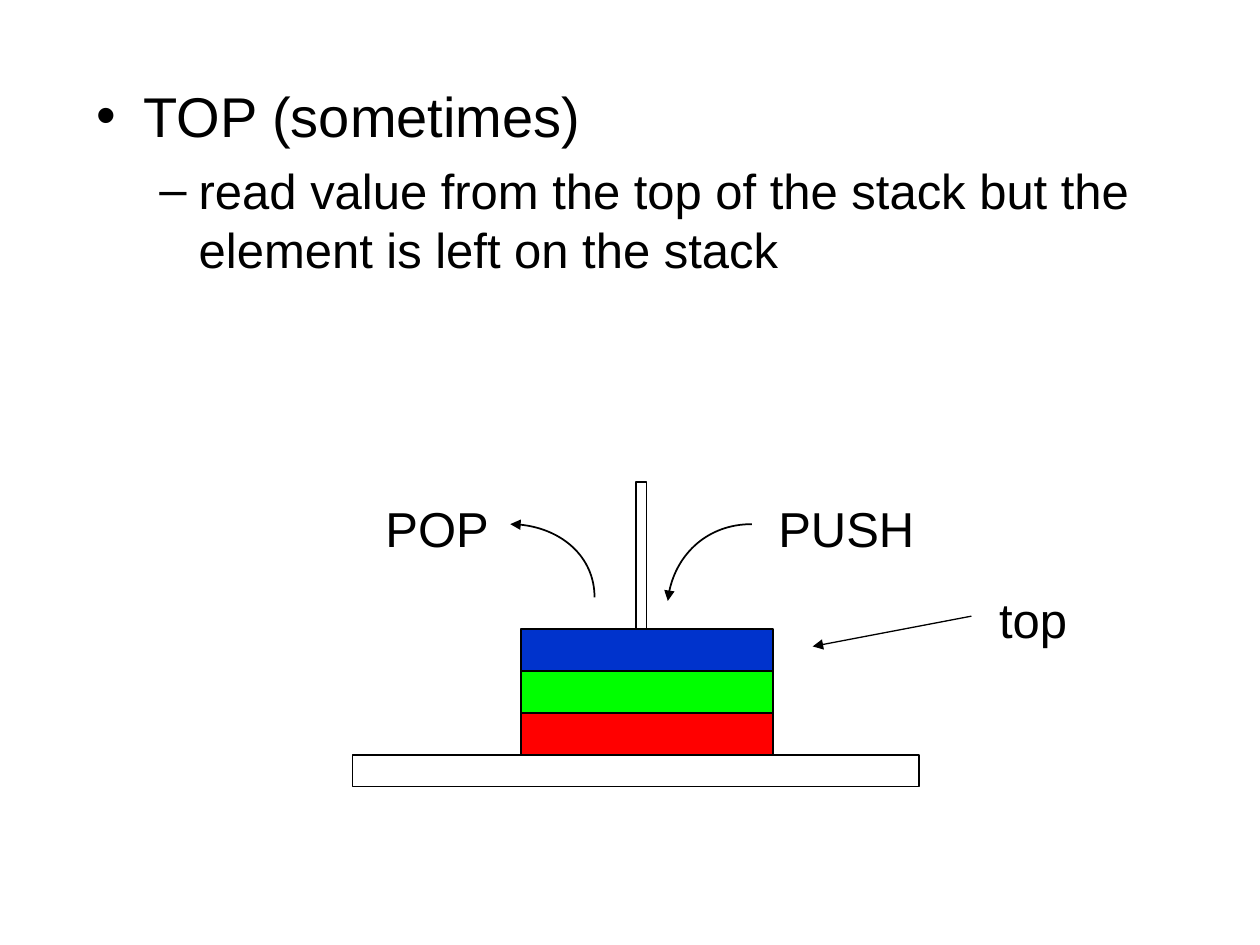
from lxml.etree import SubElement as Sub
from pptx import Presentation as Deck
from pptx.dml.color import RGBColor as Rgb
from pptx.enum.shapes import MSO_CONNECTOR as Link, MSO_SHAPE as Form
from pptx.enum.text import PP_ALIGN as Align
from pptx.oxml.ns import qn
from pptx.util import Pt

BLACK, WHITE = "000000", "FFFFFF"
DISKS = ["FF0000", "00FF00", "0033CC"]


def paint(fill, color):
    fill.solid()
    fill.fore_color.rgb = Rgb.from_string(color)


def put(obj, vals):
    for key, val in vals.items():
        setattr(obj, key, val)


def edge(shape, width):
    paint(shape.line.fill, BLACK)
    shape.line.width = Pt(width)


def tip(shape, end):
    line = shape.element.find(".//" + qn("a:ln"))
    Sub(line, qn("a:" + end), type="triangle")


def bar(slide, box, color):
    shape = slide.shapes.add_shape(Form.RECTANGLE, *map(Pt, box))
    shape.shadow.inherit = False
    paint(shape.fill, color)
    edge(shape, 1)


def curve(slide, dots, end):
    start, *rest = [tuple(map(Pt, dot)) for dot in dots]
    pen = slide.shapes.build_freeform(*start)
    pen.add_line_segments(rest, close=False)
    shape = pen.convert_to_shape()
    shape.shadow.inherit = False
    shape.fill.background()
    edge(shape, 1)
    path = shape.element.find(".//" + qn("a:path"))
    lines = path.findall(qn("a:lnTo"))
    bend = Sub(path, qn("a:cubicBezTo"))
    for line in lines:
        bend.append(line[0])
        path.remove(line)
    tip(shape, end)


def arrow(slide, start, stop):
    shape = slide.shapes.add_connector(Link.STRAIGHT, *map(Pt, start + stop))
    edge(shape, 0.75)
    tip(shape, "tailEnd")
    Sub(shape.element.spPr, qn("a:effectLst"))


def frame(slide, box, wrap=True):
    text = slide.shapes.add_textbox(*map(Pt, box)).text_frame
    text.word_wrap = wrap
    return text


def write(para, words, size, **vals):
    put(para, vals)
    run = para.add_run()
    run.text = words
    put(run.font, {"name": "Arial", "size": Pt(size)})
    paint(run.font.fill, BLACK)


def bullet(para, mark, left, hang):
    props = para._p.get_or_add_pPr()
    props.set("marL", str(Pt(left)))
    props.set("indent", str(Pt(-hang)))
    Sub(props, qn("a:buFont"), typeface="Arial")
    Sub(props, qn("a:buChar"), char=mark)


def label(slide, words, box, align=Align.CENTER, wrap=True):
    text = frame(slide, box, wrap)
    write(text.paragraphs[0], words, 28, alignment=align)


def body(slide):
    text = frame(slide, (48, 43.2, 612, 164))
    head = text.paragraphs[0]
    write(head, "TOP (sometimes)", 32)
    bullet(head, "•", 27, 27)
    item = text.add_paragraph()
    write(item, "read value from the top of the stack but the element is left on the stack",
          28, level=1, space_before=Pt(6.5))
    bullet(item, "–", 58.5, 22.5)


def stack(slide):
    base, high = 431.4, 24
    bar(slide, (201.4, base, 324, 18), WHITE)
    bar(slide, (363.5, 275.4, 6, 156), WHITE)
    for num, color in enumerate(DISKS, 1):
        bar(slide, (297.6, base - num * high, 144, high), color)


def main():
    deck = Deck()
    put(deck, {"slide_width": Pt(720), "slide_height": Pt(540)})
    slide = deck.slides.add_slide(deck.slide_layouts[6])
    stack(slide)
    label(slide, "PUSH", (429.6, 281.5, 108, 41))
    curve(slide, [(429.6, 299.5), (404.6, 299.5), (383.8, 319), (381.6, 343.4)], "tailEnd")
    curve(slide, [(291.6, 299.5), (318.2, 299.5), (339.8, 318.2), (339.8, 341.3)], "headEnd")
    label(slide, "POP", (195.8, 281.5, 108, 41))
    label(slide, "top", (563.8, 333.4, 54, 41), Align.LEFT, False)
    arrow(slide, (555.1, 352.1), (464.4, 369.4))
    body(slide)
    deck.save("out.pptx")


if __name__ == "__main__":
    main()
